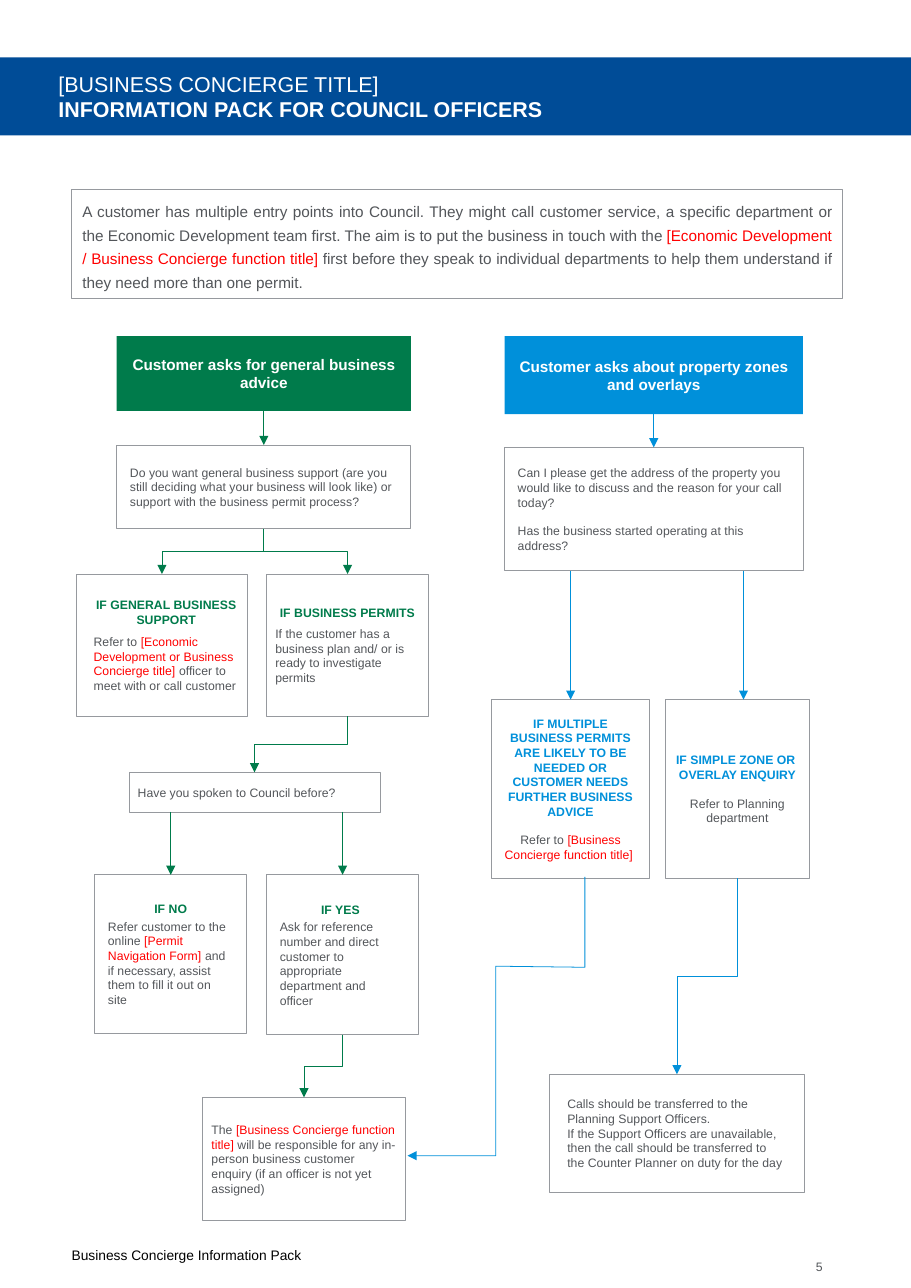
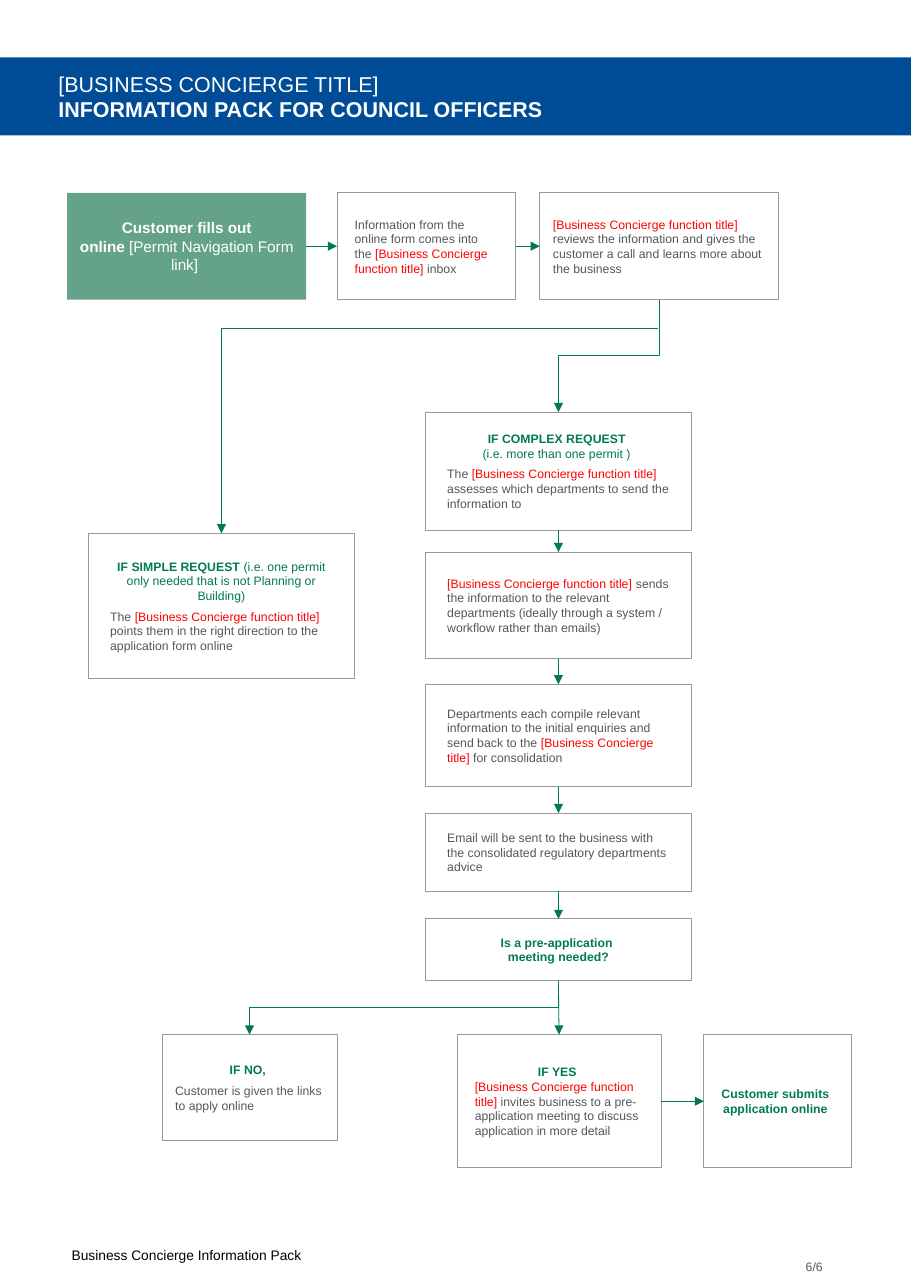
"""Build the two flow chart pages of the council information pack."""
from lxml.etree import SubElement as Sub
from pptx import Presentation
from pptx.dml.color import RGBColor as Rgb
from pptx.enum.shapes import MSO_CONNECTOR as Wire, MSO_SHAPE as Form
from pptx.enum.text import MSO_ANCHOR as Anchor, PP_ALIGN as Align
from pptx.oxml.ns import qn
from pptx.util import Inches, Pt

CELL = 0.1
WIDE, HIGH = 82.7, 116.9


class Theme:
    font = "Arial"
    navy, sky, green, sage = "004C97", "0090DA", "007B4B", "64A289"
    edge, grey, red, white, black = "96999E", "53565A", "FF0000", "FFFFFF", "000000"
    thin = 0.5
    text = {
        "title": (14, white, False), "strong": (14, white, True),
        "lead": (10, grey, False), "mark": (10, red, False),
        "cap": (10, white, True), "link": (10, white, False),
        "body": (8, grey, False), "role": (8, red, False),
        "head": (8, green, True), "note": (8, green, False),
        "blue": (8, sky, True), "foot": (9, black, False),
    }


def grid(*cells):
    return [Inches(cell * CELL) for cell in cells]


def par(*runs, align=Align.LEFT, before=0, after=0, lead=1.0):
    return runs, align, before, after, lead


def mid(*runs, **look):
    return par(*runs, align=Align.CENTER, **look)


class Page:
    def __init__(self, deck, number):
        self.slide = deck.slides.add_slide(deck.slide_layouts[6])
        self.shapes = self.slide.shapes
        self.box((0, 5.2, WIDE, 7.1), [
            par(("title", "[BUSINESS CONCIERGE TITLE]")),
            par(("strong", "INFORMATION PACK FOR COUNCIL OFFICERS"))],
            fill=Theme.navy, pad=(5.3, 1))
        self.label((6.5, 113, 29.9, 3.2), par(
            ("foot", "Business Concierge Information Pack"), lead=1.1), Anchor.TOP)
        self.label((58.1, 113, 18.6, 3.9), par(
            ("body", number), align=Align.RIGHT), Anchor.MIDDLE, (0, 2))

    def prose(self, frame, pars, pad, high, anchor):
        frame.word_wrap = True
        frame.vertical_anchor = anchor
        frame.margin_left, frame.margin_right = grid(*pad)
        frame.margin_top = frame.margin_bottom = grid(high)[0]
        for i, (runs, align, before, after, lead) in enumerate(pars):
            line = frame.add_paragraph() if i else frame.paragraphs[0]
            line.alignment, line.line_spacing = align, lead
            line.space_before, line.space_after = Pt(before), Pt(after)
            for style, words in runs:
                size, tone, bold = Theme.text[style]
                for n, part in enumerate(words.split("\n")):
                    if n:
                        line.add_line_break()
                    if not part:
                        continue
                    run = line.add_run()
                    run.text = part
                    font = run.font
                    font.name, font.size, font.bold = Theme.font, Pt(size), bold
                    font.color.rgb = Rgb.from_string(tone)

    def label(self, spot, text, anchor, pad=(0, 0)):
        self.prose(self.shapes.add_textbox(*grid(*spot)).text_frame,
                   [text], pad, 0, anchor)

    def box(self, spot, pars, fill=None, pad=(0.8, 0.8)):
        shape = self.shapes.add_shape(Form.RECTANGLE, *grid(*spot))
        shape.shadow.inherit = False
        if fill:
            shape.fill.solid()
            shape.fill.fore_color.rgb = Rgb.from_string(fill)
            shape.line.fill.background()
        else:
            shape.fill.background()
            self.stroke(shape, Theme.edge)
        self.prose(shape.text_frame, pars, pad, 0.4, Anchor.MIDDLE)
        return shape

    def stroke(self, shape, tone):
        shape.line.color.rgb = Rgb.from_string(tone)
        shape.line.width = Pt(Theme.thin)

    def point(self, shape, tone):
        self.stroke(shape, tone)
        Sub(shape.element.spPr.find(qn("a:ln")), qn("a:tailEnd"), type="triangle")

    def wire(self, kind, ends, tone):
        line = self.shapes.add_connector(kind, *ends)
        self.point(line, tone)
        Sub(line.element.spPr, qn("a:effectLst"))
        return line

    def turn(self, line, angle):
        line.element.spPr.find(qn("a:xfrm")).set("rot", str(angle * 60000))

    def drop(self, x, y, goal, tone):
        if isinstance(goal, (int, float)):
            self.wire(Wire.STRAIGHT, grid(x, y, x, goal), tone)
            return
        top = goal.left + goal.width // 2, goal.top
        line = self.wire(Wire.STRAIGHT, [*grid(x, y), *top], tone)
        line.end_connect(goal, 0)

    def across(self, a, b, tone):
        ends = (a.left + a.width, a.top + a.height // 2, b.left, b.top + b.height // 2)
        line = self.wire(Wire.STRAIGHT, ends, tone)
        line.begin_connect(a, 3)
        line.end_connect(b, 1)

    def down(self, a, b, tone):
        x, y = a.left + a.width // 2, a.top + a.height
        u, v = b.left + b.width // 2, b.top
        if abs(u - x) < Inches(0.03):
            line = self.wire(Wire.STRAIGHT, (x, y, u, v), tone)
            line.begin_connect(a, 2)
            line.end_connect(b, 0)
            return
        cx, cy = (x + u) // 2, (y + v) // 2
        long, rise = (v - y) // 2, abs(u - x) // 2
        side = 1 if u < x else -1
        line = self.wire(Wire.ELBOW, (cx - side * long, cy - rise,
                                      cx + side * long, cy + rise), tone)
        self.turn(line, 90 if u < x else 270)

    def corner(self, x, y, u, v, tone):
        line = self.wire(Wire.ELBOW, grid(u, v, x, y), tone)
        line.element.spPr.find(qn("a:prstGeom")).set("prst", "bentConnector2")
        self.turn(line, 180)

    def track(self, spots, tone):
        first, *rest = [grid(*spot) for spot in spots]
        trail = self.shapes.build_freeform(*first)
        trail.add_line_segments(rest, close=False)
        shape = trail.convert_to_shape()
        shape.shadow.inherit = False
        shape.fill.background()
        self.point(shape, tone)


ROLE = "[Business Concierge function title]"


def entry(deck):
    page = Page(deck, "5")
    box = page.box
    box((6.5, 17.2, 70, 9.9), [par(
        ("lead", "A customer has multiple entry points into Council. They might call customer service, a specific department or the Economic Development team first. The aim is to put the business in touch with the "),
        ("mark", "[Economic Development / Business Concierge function title] "),
        ("lead", "first before they speak to individual departments to help them understand if they need more than one permit."),
        align=Align.JUSTIFY, lead=1.3)], pad=(1, 1))

    zone = box((45.8, 30.5, 27.1, 7.1), [mid(
        ("cap", "Customer asks about property zones and overlays"))], Theme.sky)
    place = box((45.8, 40.6, 27.1, 11.2), [
        par(("body", "Can I please get the address of the property you would like to discuss and the reason for your call today?")),
        par(("body", "Has the business started operating at this address?"), before=9)],
        pad=(1.2, 1.2))
    many = box((44.6, 63.5, 14.4, 16.2), [
        mid(("blue", "IF MULTIPLE BUSINESS PERMITS ARE LIKELY TO BE NEEDED OR CUSTOMER NEEDS FURTHER BUSINESS ADVICE")),
        mid(("body", "Refer to "), ("role", ROLE + " "), before=9)])
    plain = box((60.4, 63.5, 13.1, 16.2), [
        mid(("blue", "IF SIMPLE ZONE OR \nOVERLAY ENQUIRY")),
        mid(("body", "Refer to Planning department"), before=9)])
    calls = box((49.9, 97.5, 23.1, 10.7), [
        par(("body", "Calls should be transferred to the Planning Support Officers.")),
        par(("body", "If the Support Officers are unavailable, then the call should be transferred to the Counter Planner on duty for the day"))],
        pad=(1.6, 1.6))
    page.down(zone, place, Theme.sky)
    page.drop(51.8, 51.8, many, Theme.sky)
    page.drop(67.5, 51.8, 63.5, Theme.sky)
    page.down(plain, calls, Theme.sky)
    page.track([(53.1, 79.6), (53.1, 87.8), (45, 87.7), (45, 104.9), (37, 104.9)],
               Theme.sky)

    advice = box((10.6, 30.5, 26.7, 6.8), [mid(
        ("cap", "Customer asks for general business advice"))], Theme.green)
    want = box((10.6, 40.4, 26.7, 7.6), [par(
        ("body", "Do you want general business support (are you still deciding what your business will look like) or support with the business permit process?"))],
        pad=(1.2, 1.2))
    aid = box((6.9, 52.1, 15.6, 12.9), [
        mid(("head", "IF GENERAL BUSINESS SUPPORT")),
        par(("body", "Refer to "),
            ("role", "[Economic Development or Business Concierge title] "),
            ("body", "officer to meet with or call customer"), before=5)],
        pad=(1.6, 0.8))
    permit = box((24.2, 52.1, 14.7, 12.9), [
        mid(("head", "IF BUSINESS PERMITS"), after=4),
        par(("body", "If the customer has a business plan and/ or is ready to investigate permits"))])
    spoke = box((11.7, 70.1, 22.8, 3.6), [par(
        ("body", "Have you spoken to Council before?"))])
    no = box((8.6, 79.4, 13.8, 14.4), [
        mid(("head", "IF NO"), after=2),
        par(("body", "Refer customer to the online "),
            ("role", "[Permit Navigation Form] "),
            ("body", "and if necessary, assist them to fill it out on site"))],
        pad=(1.2, 1.2))
    yes = box((24.2, 79.4, 13.8, 14.5), [
        mid(("head", "IF YES"), after=2),
        par(("body", "Ask for reference number and direct customer to appropriate department and officer"))],
        pad=(1.2, 1.6))
    owner = box((18.4, 99.6, 18.4, 11.2), [par(
        ("body", "The "), ("role", ROLE),
        ("body", " will be responsible for any in-person business customer enquiry (if an officer is not yet assigned)"))])
    for a, b in ((advice, want), (want, aid), (want, permit),
                 (permit, spoke), (yes, owner)):
        page.down(a, b, Theme.green)
    for x, goal in ((15.5, no), (31.1, yes)):
        page.drop(x, 73.7, goal, Theme.green)


def online(deck):
    page = Page(deck, "6/6")
    box, tone = page.box, Theme.green
    form = box((6.1, 17.5, 21.7, 9.7), [
        mid(("cap", "Customer fills out")),
        mid(("cap", "online "), ("link", "[Permit Navigation Form link] "))],
        Theme.sage)
    inbox = box((30.6, 17.5, 16.2, 9.7), [par(
        ("body", "Information from the online form comes into the"),
        ("role", " " + ROLE + " "), ("body", "inbox"))], pad=(1.6, 1.6))
    review = box((49, 17.5, 21.7, 9.7), [par(
        ("role", ROLE + " "),
        ("body", "reviews the information and gives the customer a call and learns more about the business"))],
        pad=(1.2, 0.8))
    box((8, 48.4, 24.2, 13.2), [
        mid(("head", "IF SIMPLE REQUEST "),
            ("note", "(i.e. one permit only needed that is not Planning or Building)"), after=4),
        par(("body", "The "), ("role", ROLE + " "),
            ("body", "points them in the right direction to the application form online"))],
        pad=(2, 2))

    steps = (
        (37.4, 10.7, (2, 2), [
            mid(("head", "IF COMPLEX REQUEST \n"),
                ("note", "(i.e. more than one permit ) "), after=4),
            par(("body", "The "), ("role", ROLE + " "),
                ("body", "assesses which departments to send the information to"))]),
        (50.1, 9.7, (2, 1.6), [par(
            ("role", ROLE + " "),
            ("body", "sends the information to the relevant departments (ideally through a system / workflow rather than emails)"))]),
        (62.1, 9.3, (2, 1.6), [par(
            ("body", "Departments each compile relevant information to the initial enquiries and send back to the "),
            ("role", "[Business Concierge title]"), ("body", " for consolidation"))]),
        (73.8, 7.1, (2, 1.6), [par(
            ("body", "Email will be sent to the business with the consolidated regulatory departments advice"))]),
        (83.4, 5.6, (0.8, 0.8), [mid(
            ("head", "Is a pre-application \nmeeting needed?"))]),
    )
    chain = [review] + [box((38.6, top, 24.2, high), pars, pad=pad)
                        for top, high, pad, pars in steps]
    no = box((14.7, 93.9, 15.9, 9.6), [
        mid(("head", "IF NO, "), after=4),
        par(("body", "Customer is given the links to apply online"))], pad=(1.2, 1.2))
    yes = box((41.5, 93.9, 18.5, 12.1), [
        mid(("head", "IF YES ")),
        par(("role", ROLE + " "),
            ("body", "invites business to a pre-application meeting to discuss application in more detail"))],
        pad=(1.6, 1.6))
    submit = box((63.9, 93.9, 13.4, 12.1), [mid(
        ("head", "Customer submits application online"))], pad=(1.6, 2))
    for a, b in [*zip(chain, chain[1:]), (chain[-1], no), (chain[-1], yes)]:
        page.down(a, b, tone)
    for a, b in ((form, inbox), (inbox, review), (yes, submit)):
        page.across(a, b, tone)
    page.corner(59.7, 29.8, 20.1, 48.4, tone)


def main():
    deck = Presentation()
    deck.slide_width, deck.slide_height = grid(WIDE, HIGH)
    entry(deck)
    online(deck)
    deck.save("out.pptx")


if __name__ == "__main__":
    main()
